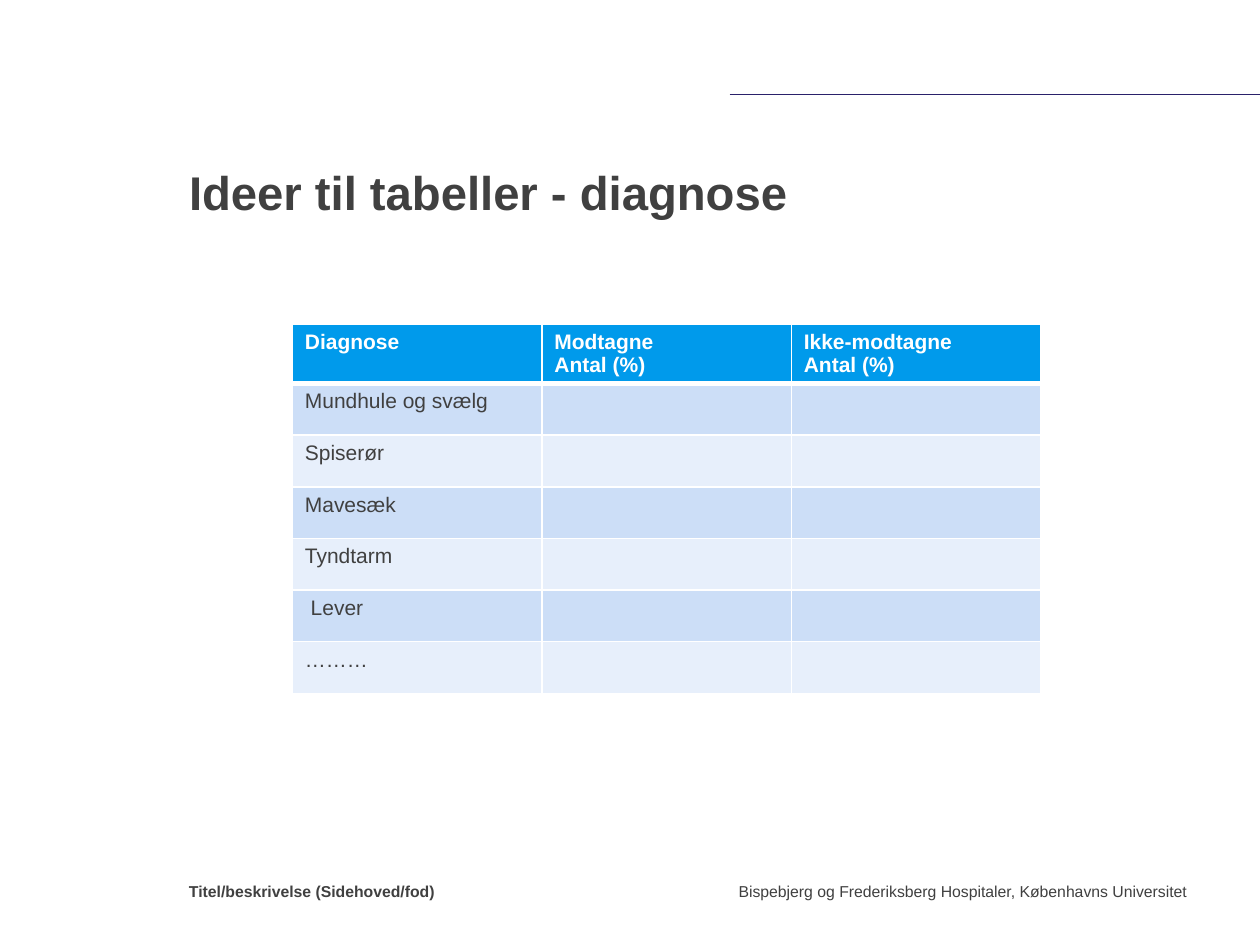
from lxml import etree
from pptx import Presentation
from pptx.dml.color import RGBColor
from pptx.enum import shapes, text
from pptx.oxml.ns import qn
from pptx.util import Inches, Pt

DARK, WHITE, BLUE, NAVY = "404040", "FFFFFF", "009AEB", "2A216A"
BANDS = ["CCDEF7", "E7EFFB"]


def rgb(value):
    return RGBColor.from_string(value)


def write(tf, lines, size, color=DARK, bold=False, align=text.PP_ALIGN.LEFT):
    """Fill a text frame with one paragraph per line."""
    for i, line in enumerate(lines):
        p = tf.paragraphs[0] if i == 0 else tf.add_paragraph()
        p.alignment = align
        r = p.add_run()
        r.text = line
        for name, value in {"name": "Arial", "size": Pt(size), "bold": bold}.items():
            setattr(r.font, name, value)
        r.font.color.rgb = rgb(color)


prs = Presentation()
prs.slide_width, prs.slide_height = Inches(10), Inches(7.5)
s = prs.slides.add_slide(prs.slide_layouts[5])
frame = {"margin_left": 0, "margin_top": 0, "margin_right": 0, "margin_bottom": 0,
         "word_wrap": True, "auto_size": text.MSO_AUTO_SIZE.NONE}

# Rule at the top right
rule = s.shapes.add_connector(shapes.MSO_CONNECTOR.STRAIGHT,
                              Inches(5.79), Inches(0.75), Inches(10), Inches(0.75))
rule.line.color.rgb = rgb(NAVY)
rule.line.width = Pt(0.5)
etree.SubElement(rule._element.spPr, qn("a:effectLst"))

# Title
title = s.shapes.title
title.left, title.top, title.width, title.height = map(Inches, (1.5, 0.92, 7.92, 0.83))
for name, value in {**frame, "vertical_anchor": text.MSO_ANCHOR.BOTTOM}.items():
    setattr(title.text_frame, name, value)
write(title.text_frame, ["Ideer til tabeller - diagnose"], 27, bold=True)
title.text_frame.paragraphs[0].line_spacing = 0.9

# Diagnosis table
header = [["Diagnose"], ["Modtagne", "Antal (%)"], ["Ikke-modtagne", "Antal (%)"]]
diagnoses = ["Mundhule og svælg", "Spiserør", "Mavesæk", "Tyndtarm", " Lever", "………"]
rows = [header] + [[[d], [], []] for d in diagnoses]
table = s.shapes.add_table(len(rows), 3, Inches(2.32), Inches(2.57),
                           Inches(5.94), Inches(2.91)).table
for col in table.columns:
    col.width = Inches(1.98)
for i, row in enumerate(rows):
    head = i == 0
    table.rows[i].height = Inches(0.47 if head else 0.41)
    for j, lines in enumerate(row):
        cell = table.cell(i, j)
        write(cell.text_frame, lines, 12, WHITE if head else DARK, head)
        # Borders come before the fill in the cell properties
        for side in "LRTB":
            thick = (head and side == "B") or (i == 1 and side == "T")
            ln = etree.SubElement(cell._tc.get_or_add_tcPr(), qn("a:ln" + side),
                                  w=str(Pt(3 if thick else 1)))
            fill = etree.SubElement(ln, qn("a:solidFill"))
            etree.SubElement(fill, qn("a:srgbClr"), val=WHITE)
        cell.fill.solid()
        cell.fill.fore_color.rgb = rgb(BLUE if head else BANDS[(i - 1) % 2])

# Footer
footers = [
    (1.5, 3.5, "Titel/beskrivelse (Sidehoved/fod)", True, text.PP_ALIGN.LEFT),
    (5.16, 4.26, "Bispebjerg og Frederiksberg Hospitaler, Københavns Universitet",
     False, text.PP_ALIGN.RIGHT),
]
for left, width, line, bold, align in footers:
    tf = s.shapes.add_textbox(Inches(left), Inches(7), Inches(width), Inches(0.5)).text_frame
    for name, value in frame.items():
        setattr(tf, name, value)
    write(tf, [line], 9, bold=bold, align=align)

prs.save("out.pptx")
